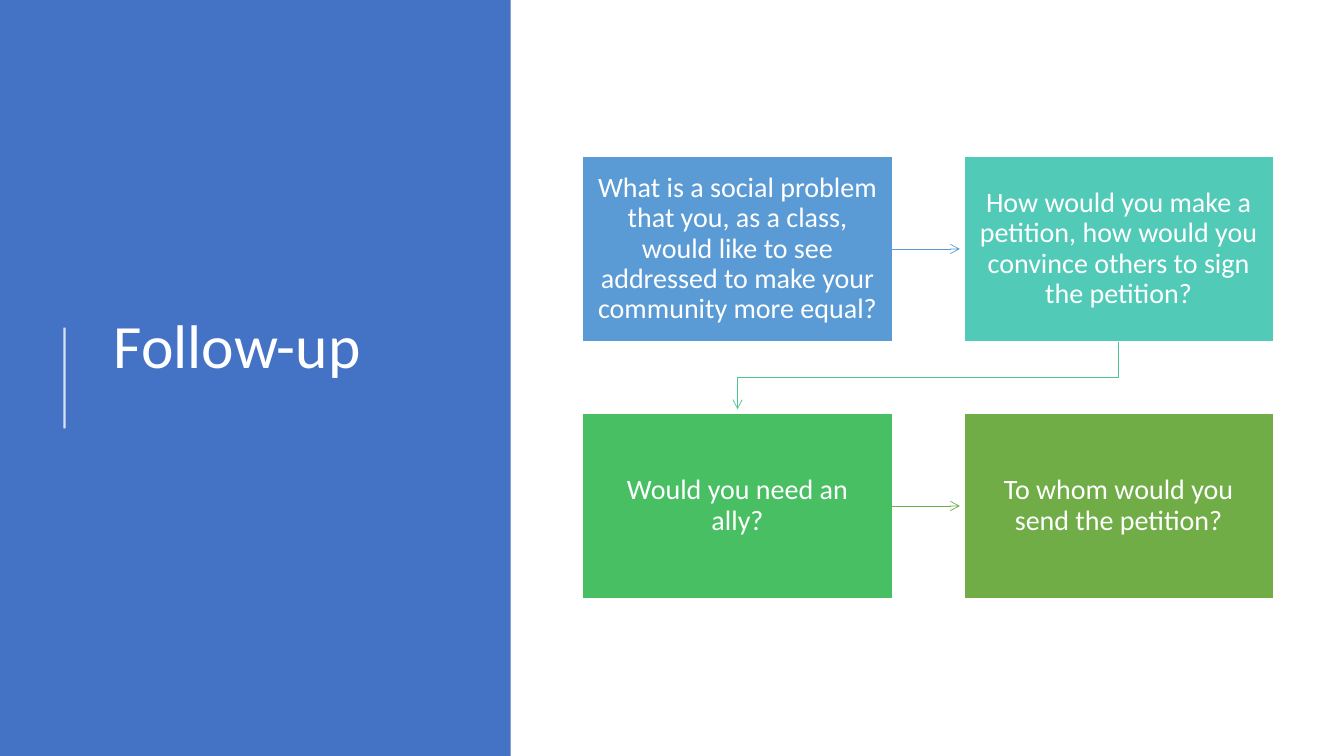
from dataclasses import dataclass

from lxml.etree import SubElement
from pptx import Presentation
from pptx.dml.color import RGBColor
from pptx.enum.shapes import MSO_CONNECTOR, MSO_SHAPE
from pptx.enum.text import MSO_ANCHOR, PP_ALIGN
from pptx.oxml.ns import qn
from pptx.util import Inches, Pt

TITLE = "Follow-up"
STEPS = [
    ("What is a social problem that you, as a class, would like to see "
     "addressed to make your community more equal?", "5B9BD5"),
    ("How would you make a petition, how would you convince others to sign "
     "the petition?", "52CAB8"),
    ("Would you need an ally?", "49BF64"),
    ("To whom would you send the petition?", "70AD47"),
]
ARROW_COLORS = ["5B9BD5", "4DC58D", "70AD47"]


@dataclass(frozen=True)
class Theme:
    panel: str = "4472C4"
    white: str = "FFFFFF"
    font: str = "Calibri"
    title_size: int = 44
    step_size: int = 20
    rule_width: float = 1.5
    border_width: float = 1
    arrow_width: float = 0.5


THEME = Theme()
SLIDE_WIDTH, SLIDE_HEIGHT = 13.33, 7.5
PANEL_WIDTH = SLIDE_WIDTH * 0.38
COLUMNS = 2
GRID_LEFT, GRID_TOP = 5.78, 1.55
BOX_WIDTH, BOX_HEIGHT = 3.07, 1.84
COLUMN_STEP, ROW_STEP = 3.78, 2.55
ARROW_GAP = 0.04


def write_text(shape, text, *, size, align=PP_ALIGN.LEFT, insets=(0.1, 0.05, 0.1, 0.05)):
    frame = shape.text_frame
    frame.word_wrap = True
    frame.vertical_anchor = MSO_ANCHOR.MIDDLE
    frame.margin_left, frame.margin_top, frame.margin_right, frame.margin_bottom = map(Inches, insets)
    paragraph = frame.paragraphs[0]
    paragraph.alignment = align
    paragraph.line_spacing = 0.9
    run = paragraph.add_run()
    run.text = text
    run.font.name = THEME.font
    run.font.size = Pt(size)
    run.font.color.rgb = RGBColor.from_string(THEME.white)


def add_rectangle(slide, left, top, width, height, color):
    shape = slide.shapes.add_shape(MSO_SHAPE.RECTANGLE, *map(Inches, (left, top, width, height)))
    shape.shadow.inherit = False
    shape.fill.solid()
    shape.fill.fore_color.rgb = RGBColor.from_string(color)
    shape.line.fill.background()
    return shape


def style_line(shape, color, width):
    shape.line.color.rgb = RGBColor.from_string(color)
    shape.line.width = Pt(width)


def add_line(slide, start, end, color, width):
    connector = slide.shapes.add_connector(MSO_CONNECTOR.STRAIGHT, *map(Inches, start + end))
    style_line(connector, color, width)
    SubElement(connector._element.spPr, qn("a:effectLst"))
    return connector


def add_arrowhead(shape):
    SubElement(shape.line._get_or_add_ln(), qn("a:tailEnd"), type="arrow")


def box_position(index):
    row, column = divmod(index, COLUMNS)
    return GRID_LEFT + column * COLUMN_STEP, GRID_TOP + row * ROW_STEP


def add_step(slide, index, text, color):
    box = add_rectangle(slide, *box_position(index), BOX_WIDTH, BOX_HEIGHT, color)
    style_line(box, THEME.white, THEME.border_width)
    write_text(box, text, size=THEME.step_size, align=PP_ALIGN.CENTER,
               insets=(0.15, 0.16, 0.15, 0.16))
    return box


def add_row_arrow(slide, boxes, index, color):
    left, top = box_position(index)
    middle = top + BOX_HEIGHT / 2
    arrow = add_line(slide, (left + BOX_WIDTH, middle),
                     (left + COLUMN_STEP - ARROW_GAP, middle), color, THEME.arrow_width)
    arrow.begin_connect(boxes[index], 3)
    add_arrowhead(arrow)


def add_wrap_arrow(slide, index, color):
    left, top = box_position(index)
    next_left, next_top = box_position(index + 1)
    start_x, end_x = left + BOX_WIDTH / 2, next_left + BOX_WIDTH / 2
    start_y, end_y = top + BOX_HEIGHT, next_top - ARROW_GAP
    turn_y = (start_y + next_top) / 2
    points = [(start_x, turn_y), (end_x, turn_y), (end_x, end_y)]
    builder = slide.shapes.build_freeform(Inches(start_x), Inches(start_y))
    builder.add_line_segments([(Inches(x), Inches(y)) for x, y in points], close=False)
    arrow = builder.convert_to_shape()
    arrow.shadow.inherit = False
    arrow.fill.background()
    style_line(arrow, color, THEME.arrow_width)
    add_arrowhead(arrow)


def add_title_panel(slide):
    add_rectangle(slide, 0, 0, PANEL_WIDTH, SLIDE_HEIGHT, THEME.panel)
    title = slide.shapes.add_textbox(*map(Inches, (1.03, 0.78, 3.69, 6.02)))
    write_text(title, TITLE, size=THEME.title_size, insets=(0.1, 0.05, 0.1, 0.72))
    rule = add_line(slide, (0.64, 4.25), (0.64, 3.25), THEME.white, THEME.rule_width)
    color = rule.line._get_or_add_ln().find(f".//{qn('a:srgbClr')}")
    SubElement(color, qn("a:alpha"), val="80000")


def main():
    presentation = Presentation()
    presentation.slide_width = Inches(SLIDE_WIDTH)
    presentation.slide_height = Inches(SLIDE_HEIGHT)
    slide = presentation.slides.add_slide(presentation.slide_layouts[6])
    add_title_panel(slide)
    boxes = [add_step(slide, index, *step) for index, step in enumerate(STEPS)]
    for index, color in enumerate(ARROW_COLORS):
        if (index + 1) % COLUMNS:
            add_row_arrow(slide, boxes, index, color)
        else:
            add_wrap_arrow(slide, index, color)
    presentation.save("out.pptx")


if __name__ == "__main__":
    main()
